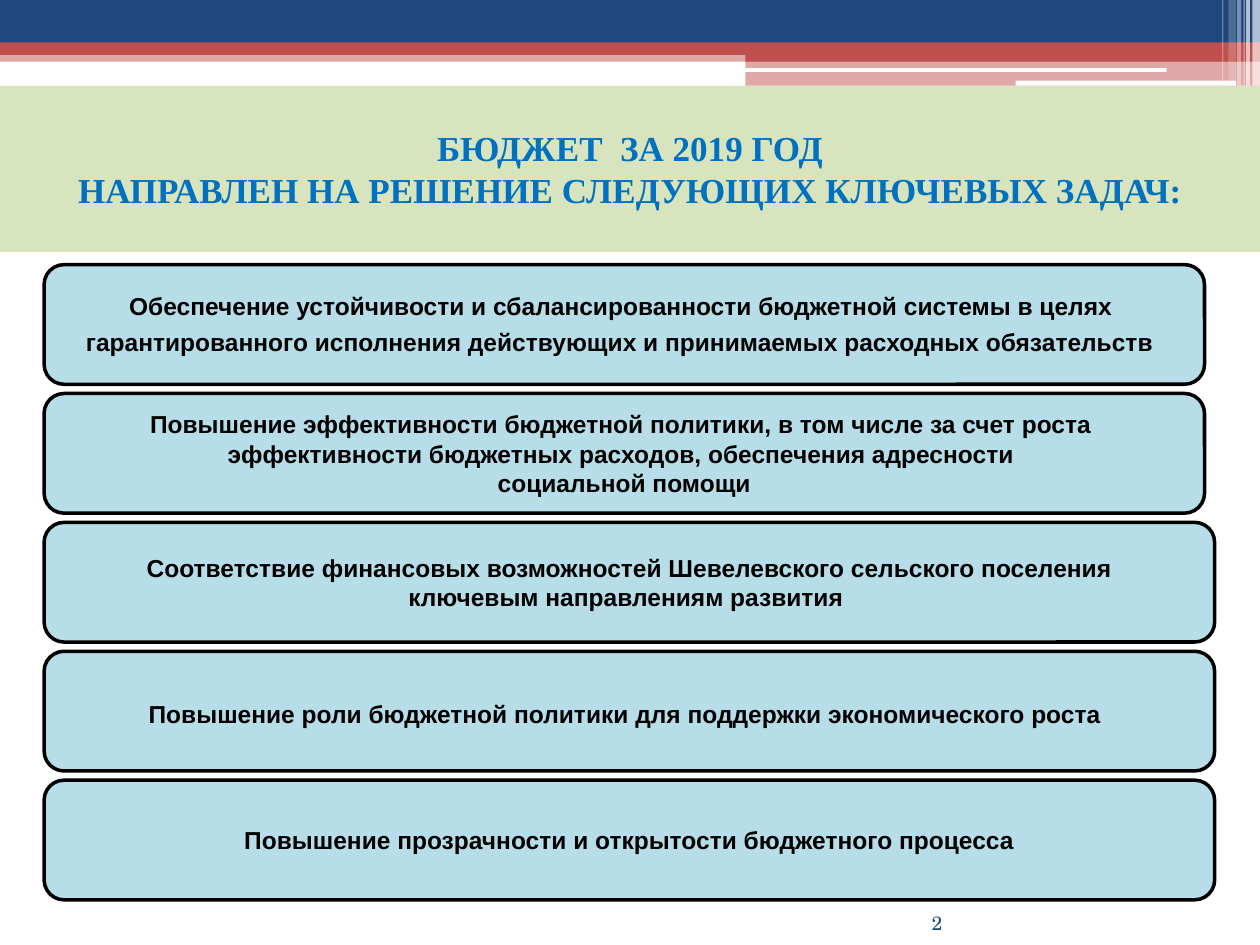
"""Build the slide of key budget tasks for 2019."""
from dataclasses import dataclass

import lxml.etree
import pptx
import pptx.dml.color
import pptx.enum.shapes
import pptx.enum.text
import pptx.oxml.ns
import pptx.util

Pt = pptx.util.Pt
Kind = pptx.enum.shapes.MSO_SHAPE
Align = pptx.enum.text.PP_ALIGN
Anchor = pptx.enum.text.MSO_ANCHOR
NAVY, RED, WHITE, BLACK = "1F497D", "C0504D", "FFFFFF", "000000"
TITLE = {"name": "Times New Roman", "size": Pt(20), "bold": True}
TASK = {"name": "Arial", "size": Pt(14), "bold": True}
SPACE = {"name": "Arial", "size": Pt(18), "bold": False}
PAGE = {"name": "TeX Gyre Schola", "size": Pt(11), "bold": False}


@dataclass
class Band:
    left: float
    top: float
    width: float
    height: float
    hue: str
    alpha: int = 100
    kind: int = Kind.RECTANGLE


@dataclass
class Task:
    width: float
    lines: list[str]
    space: bool = False


BANDS = [
    Band(0, 28.8, 720, 6.5, RED, 50),
    Band(0, 0, 720, 24.5, NAVY),
    Band(0, 24.2, 720, 7.2, RED),
    Band(426, 28.1, 294, 7.2, RED),
    Band(426, 34.6, 294, 14.4, RED, 50),
    Band(425.5, 38.9, 241.2, 2.2, WHITE, kind=Kind.ROUNDED_RECTANGLE),
    Band(580.3, 46.1, 126, 2.9, WHITE, kind=Kind.ROUNDED_RECTANGLE),
    Band(715.7, 0, 4.3, 49, WHITE, 65),
    Band(712.1, 0, 2.2, 49, WHITE, 65),
    Band(710.6, 0, 0.7, 49, WHITE, 60),
    Band(707, 0, 2.2, 49, WHITE, 40),
    Band(702, 0, 4.3, 46.1, WHITE, 20),
    Band(698.4, 0, 0.7, 46.1, WHITE, 30),
]
SHORT, LONG = 663.1, 668.9
TASKS = [
    Task(SHORT, [
        "Обеспечение устойчивости и сбалансированности бюджетной системы в целях ",
        "гарантированного исполнения действующих и принимаемых расходных обязательств",
    ], True),
    Task(SHORT, [
        "Повышение эффективности бюджетной политики, в том числе за счет роста ",
        "эффективности бюджетных расходов, обеспечения адресности ",
        "социальной помощи",
    ]),
    Task(LONG, [
        "Соответствие финансовых возможностей Шевелевского сельского поселения",
        "ключевым направлениям развития ",
    ]),
    Task(LONG, ["Повышение роли бюджетной политики для поддержки экономического роста"], True),
    Task(LONG, ["Повышение прозрачности и открытости бюджетного процесса"]),
]


def paint(form, hue: str) -> None:
    """Give a fill or font one solid colour."""
    if hasattr(form, "solid"):
        form.solid()
        form.fore_color.rgb = pptx.dml.color.RGBColor.from_string(hue)
    else:
        form.color.rgb = pptx.dml.color.RGBColor.from_string(hue)


def style(font, form: dict, hue: str) -> None:
    """Apply format values and a colour to a font."""
    for key, value in form.items():
        setattr(font, key, value)
    paint(font, hue)


def write(frame, lines: list[str], form: dict, hue: str, align=Align.CENTER) -> None:
    """Write one paragraph per line."""
    frame.text = "\n".join(lines)
    for para in frame.paragraphs:
        para.alignment = align
        for run in para.runs:
            style(run.font, form, hue)


def draw_band(slide, band: Band):
    """Draw a filled shape without an outline."""
    box = (Pt(v) for v in (band.left, band.top, band.width, band.height))
    shape = slide.shapes.add_shape(band.kind, *box)
    shape.shadow.inherit = False
    shape.line.fill.background()
    paint(shape.fill, band.hue)
    if band.alpha < 100:
        qn = pptx.oxml.ns.qn
        node = shape.fill._xPr.find(".//" + qn("a:srgbClr"))
        lxml.etree.SubElement(node, qn("a:alpha")).set("val", str(band.alpha * 1000))
    return shape


def draw_task(slide, task: Task, top: float) -> None:
    """Draw an outlined box with a task."""
    shape = draw_band(slide, Band(25.2, top, task.width, 68.4, "B7DEE8",
                                  kind=Kind.ROUNDED_RECTANGLE))
    paint(shape.line.fill, BLACK)
    shape.line.width = Pt(2)
    frame = shape.text_frame
    frame.word_wrap = False
    frame.vertical_anchor = Anchor.MIDDLE
    write(frame, task.lines, TASK, BLACK)
    if task.space:
        run = frame.paragraphs[-1].add_run()
        run.text = " "
        style(run.font, SPACE, BLACK)


def draw_title(shape) -> None:
    """Place and format the title."""
    place = {"left": Pt(0), "top": Pt(49), "width": Pt(720), "height": Pt(95)}
    for key, value in place.items():
        setattr(shape, key, value)
    paint(shape.fill, "D7E4BD")
    frame = shape.text_frame
    frame.auto_size = pptx.enum.text.MSO_AUTO_SIZE.NONE
    frame.vertical_anchor = Anchor.MIDDLE
    lines = ["БЮДЖЕТ  ЗА 2019 ГОД", "НАПРАВЛЕН НА РЕШЕНИЕ СЛЕДУЮЩИХ КЛЮЧЕВЫХ ЗАДАЧ:"]
    write(frame, lines, TITLE, "0070C0")


def draw_page(slide) -> None:
    """Draw the page number."""
    frame = slide.shapes.add_textbox(Pt(492.5), Pt(516.2), Pt(46), Pt(18)).text_frame
    for side in ("left", "top", "right", "bottom"):
        setattr(frame, "margin_" + side, Pt(0))
    frame.word_wrap = True
    frame.vertical_anchor = Anchor.BOTTOM
    write(frame, ["2"], PAGE, NAVY, Align.RIGHT)


def main() -> None:
    """Build and save the deck."""
    deck = pptx.Presentation()
    deck.slide_width, deck.slide_height = Pt(720), Pt(540)
    slide = deck.slides.add_slide(deck.slide_layouts[5])
    for band in BANDS:
        draw_band(slide, band)
    draw_title(slide.shapes.title)
    for row, task in enumerate(TASKS):
        draw_task(slide, task, 151.2 + row * 73.65)
    draw_page(slide)
    deck.save("out.pptx")


if __name__ == "__main__":
    main()
